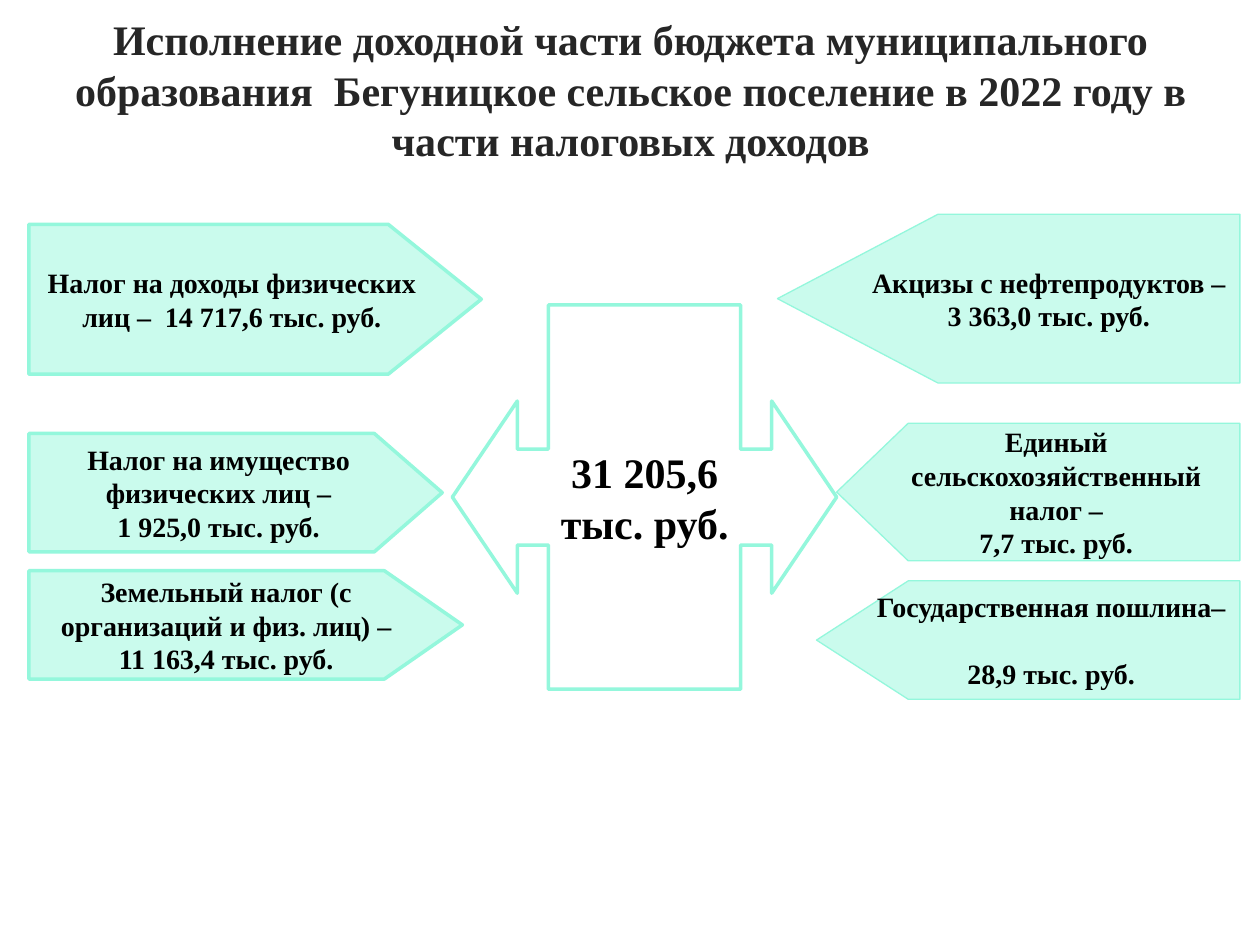
from pptx import Presentation
from pptx.dml.color import RGBColor
from pptx.enum import shapes, text
from pptx.util import Inches, Pt

FONT = "Times New Roman"
TITLE_COLOR = RGBColor(0x26, 0x26, 0x26)
BLACK = RGBColor(0, 0, 0)
WHITE = RGBColor(0xFF, 0xFF, 0xFF)
MINT = RGBColor(0xCA, 0xFB, 0xED)
MINT_LINE = RGBColor(0x94, 0xF7, 0xDC)

TITLE = ("Исполнение доходной части бюджета муниципального образования  "
         "Бегуницкое сельское поселение в 2022 году в части налоговых доходов")
TOTAL = ["31 205,6", "тыс. руб."]

# lines, top, width, height, point adjustment, gap between lines in points
LEFT_EDGE = 0.23
LEFT_TAXES = [
    (["Налог на доходы физических лиц –  14 717,6 тыс. руб."], 1.78, 3.59, 1.19, 0.621, 0),
    (["Налог на имущество физических лиц –", "1 925,0 тыс. руб."], 3.44, 3.28, 0.94, 0.574, 0),
    (["Земельный налог (с организаций и физ. лиц) –", "11 163,4 тыс. руб."],
     4.53, 3.44, 0.86, 0.72, 0),
]
RIGHT_EDGE = 9.84
RIGHT_TAXES = [
    (["Акцизы с нефтепродуктов –3 363,0 тыс. руб."], 1.7, 3.67, 1.34, 0.951, 0),
    (["Единый сельскохозяйственный налог –", "7,7 тыс. руб."], 3.36, 3.2, 1.09, 0.52, 0),
    (["Государственная пошлина–", "28,9 тыс. руб."], 4.61, 3.36, 0.94, 0.774, 19),
]


def write(shape, lines, size, color=BLACK, anchor=text.MSO_ANCHOR.MIDDLE, wrap=True, gap=0):
    frame = shape.text_frame
    frame.auto_size = text.MSO_AUTO_SIZE.NONE
    frame.word_wrap = wrap
    frame.vertical_anchor = anchor
    for index, line in enumerate(lines):
        paragraph = frame.add_paragraph() if index else frame.paragraphs[0]
        paragraph.alignment = text.PP_ALIGN.CENTER
        paragraph.space_before = Pt(gap if index else 0)
        run = paragraph.add_run()
        run.text = line
        run.font.name = FONT
        run.font.size = Pt(size)
        run.font.bold = True
        run.font.color.rgb = color


def add_block(slide, kind, box, adjustments, fill, line_width, rotation=0):
    shape = slide.shapes.add_shape(kind, *map(Inches, box))
    for index, value in enumerate(adjustments):
        shape.adjustments[index] = value
    shape.rotation = rotation
    shape.shadow.inherit = False
    shape.fill.solid()
    shape.fill.fore_color.rgb = fill
    shape.line.color.rgb = MINT_LINE
    shape.line.width = Pt(line_width)
    return shape


def add_tax(slide, tax, from_right):
    lines, top, width, height, point, gap = tax
    left = RIGHT_EDGE - width if from_right else LEFT_EDGE
    shape = add_block(slide, shapes.MSO_SHAPE.PENTAGON, (left, top, width, height), [point],
                      MINT, 0.75 if from_right else 2, 180 if from_right else 0)
    write(shape, lines, 16, gap=gap)
    if from_right:  # turn the text upright again
        shape.text_frame._txBody.bodyPr.set("rot", "10800000")


def main():
    presentation = Presentation()
    presentation.slide_width, presentation.slide_height = Inches(10), Inches(7.5)
    slide = presentation.slides.add_slide(presentation.slide_layouts[5])

    title = slide.shapes.title
    title.left, title.top, title.width, title.height = map(Inches, (0.2, 0.16, 9.61, 1.15))
    write(title, [TITLE], 24, TITLE_COLOR, text.MSO_ANCHOR.BOTTOM)
    frame = title.text_frame
    frame.margin_left = frame.margin_right = frame.margin_bottom = 0
    frame.margin_top = Inches(0.05)

    total = add_block(slide, shapes.MSO_SHAPE.UP_DOWN_ARROW_CALLOUT, (3.59, 2.42, 3.05, 3.05),
                      [0.25, 0.25, 0.169, 0.5], WHITE, 2, 270)
    write(total, TOTAL, 24, wrap=False)
    total.text_frame._txBody.bodyPr.set("vert", "eaVert")

    for tax in RIGHT_TAXES:
        add_tax(slide, tax, True)
    for tax in LEFT_TAXES:
        add_tax(slide, tax, False)

    presentation.save("out.pptx")


if __name__ == "__main__":
    main()
